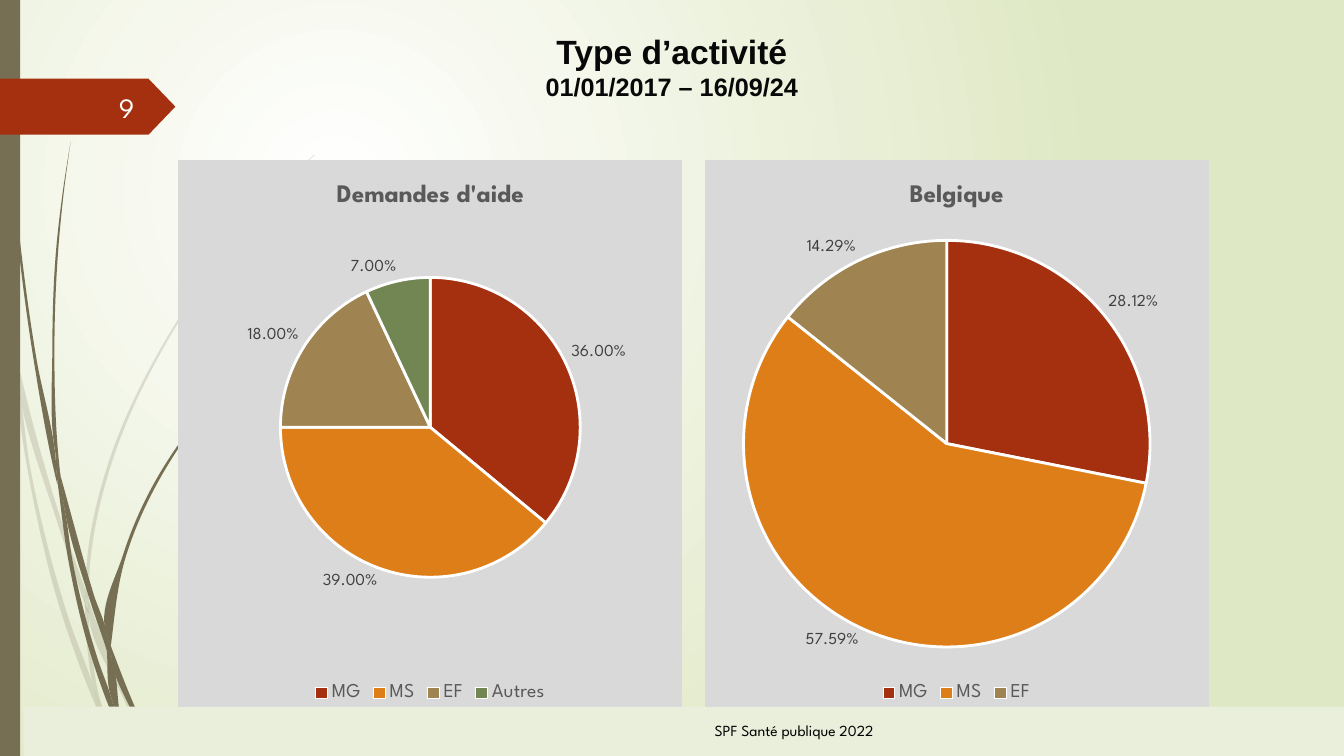
import itertools
import pptx
import pptx.chart.data
import pptx.dml.color
import pptx.enum.chart
import pptx.enum.shapes
import pptx.enum.text
import pptx.oxml
import pptx.oxml.ns
import pptx.util

Pt = pptx.util.Pt
ALIGN = pptx.enum.text.PP_ALIGN
SHAPES = pptx.enum.shapes.MSO_SHAPE
ANCHOR = pptx.enum.text.MSO_ANCHOR

# Content
TITLE = "Type d’activité\n01/01/2017 – 16/09/24"
NUMBER = "9"
SOURCE = "SPF Santé publique 2022"
PIES = [  # title, left edge, values by type, pie area within the chart
    ("Belgique", 503.3, {"MG": 0.2812, "MS": 0.5759, "EF": 0.1429}, (27.5, 57, 291, 291)),
    ("Demandes d'aide", 127.4, {"MG": 0.36, "MS": 0.39, "EF": 0.18, "Autres": 0.07},
     (33.5, 83.5, 293, 214.6)),
]
PIE_TOP, PIE_WIDE, PIE_HIGH = 114.5, 360, 390.2

# Grass parts: left and right edge as x, y, x, y ... from top to bottom
FAINT = [
    ((0, 215.3, 7.2, 247.7, 7.9, 252), (0, 203, 6.5, 231.8, 7.9, 252)),
    ((10.1, 248.4, 12.2, 270.7, 41.8, 375.8, 60.5, 431.3),
     (10.1, 248.4, 26, 312, 44.6, 374.4, 61.2, 421.9)),
    ((63.4, 429.1, 63.4, 439.2, 88.6, 499.7, 108, 540.7),
     (63.4, 429.1, 66.2, 437, 91.4, 498.2, 111.6, 540.7)),
    ((7.9, 252, 20.2, 338.4, 46.8, 447.1, 66.2, 499, 72.7, 514.1),
     (7.9, 252, 12.2, 270.7, 22.3, 337.7, 50.4, 445.7, 67, 491.8, 71.3, 509, 72.7, 514.1)),
    ((60.5, 431.3, 62.6, 465.1, 67, 491.8, 69.1, 498.2, 75.6, 511.9),
     (60.5, 431.3, 63.4, 437.8, 63.4, 439.2, 65.5, 465.1, 74.2, 508.3, 75.6, 511.9)),
    ((224.6, 110.2, 208.1, 126, 193, 141.8, 164.2, 175.7, 113.8, 250.6, 77, 331.9,
      61.2, 420.5, 61.2, 421.9, 63.4, 429.1),
     (224.6, 110.9, 208.8, 126, 193, 142.6, 164.9, 176.4, 115.2, 251.3, 79.2, 332.6,
      63.4, 420.5, 63.4, 429.1)),
    ((61.2, 421.9, 60.5, 431.3, 63.4, 439.2), (61.2, 421.9, 63.4, 429.1, 63.4, 439.2)),
    ((67, 491.8, 71.3, 509, 72.7, 514.1, 85.7, 540.7),
     (67, 491.8, 69.1, 498.2, 75.6, 511.9, 85.7, 540.7)),
]
DARK = [
    ((2.2, 0, 2.9, 34.6, 5, 79.2, 12.2, 167.8, 23.8, 255.6, 40.3, 343.4, 41, 346.3),
     (2.9, 0, 3.6, 34.6, 5.8, 78.5, 13.7, 167, 25.9, 255.6, 39.6, 326.2, 41, 346.3)),
    ((43.2, 339.8, 46.1, 363.6, 63.4, 426.2, 76.3, 464.4),
     (43.2, 339.8, 67, 424.8, 76.3, 454.3, 76.3, 464.4)),
    ((79.2, 461.5, 79.9, 472.3, 95, 509.8, 109.4, 539.3),
     (79.2, 461.5, 81.4, 467.3, 97.9, 508.3, 113, 539.3)),
    ((41, 343.4, 49, 401, 67, 474.5, 79.9, 509.8, 84.2, 519.8),
     (41, 343.4, 46.1, 363.6, 51.8, 400.3, 70.6, 473, 79.2, 497.5, 83.5, 516.2, 84.2, 519.8)),
    ((50.4, 101.5, 44.6, 139, 40.3, 176.4, 37.4, 251.3, 39.6, 323.3, 43.2, 339.8),
     (50.4, 101.5, 45.4, 139, 41.8, 176.4, 38.9, 251.3, 41.8, 326.2, 43.2, 339.8)),
    ((39.6, 323.3, 41, 343.4, 46.1, 363.6), (39.6, 323.3, 43.2, 339.8, 46.1, 363.6)),
    ((187.2, 247.7, 166.3, 268.6, 146.9, 291.6, 112.3, 341.3, 87.8, 396.7, 76.3, 454.3,
      79.2, 461.5),
     (187.9, 247.7, 166.3, 269.3, 147.6, 292.3, 113.8, 342.7, 90, 397.4, 79.9, 455.8,
      79.2, 461.5)),
    ((76.3, 464.4, 79.2, 497.5, 83.5, 508.3, 87.8, 517.7),
     (76.3, 464.4, 78.5, 468.7, 79.9, 472.3, 87.1, 515.5, 87.8, 517.7)),
    ((76.3, 454.3, 76.3, 464.4, 79.9, 472.3), (76.3, 454.3, 79.2, 461.5, 79.9, 472.3)),
    ((79.2, 497.5, 83.5, 516.2, 84.2, 519.8, 93.6, 539.3),
     (79.2, 497.5, 83.5, 508.3, 87.8, 517.7, 95.8, 539.3)),
]


class Theme:
    white, black, ink, flag_text = "FFFFFF", "000000", "080808", "FEFFFF"
    glow, grass, flag, band = "DFE8C4", "766F54", "A53010", "EAEFDB"
    panel, grey, label = "D9D9D9", "595959", "404040"
    slices = ("A53010", "DE7E18", "9F8351", "728653")
    head, body = "Arial", "League Spartan"
    title, date, number, source = 24, 18, 20, 11
    pie_title, legend, value, chart = 18, 14, 12, 10


def color(code):
    return pptx.dml.color.RGBColor.from_string(code)


def style(font, size, code, name=Theme.body, bold=False):
    font.size, font.name, font.bold = Pt(size), name, bold
    font.color.rgb = color(code)


def xml(text):
    names = pptx.oxml.ns.nsdecls("a", "c")
    return pptx.oxml.parse_xml(text.replace(">", f" {names}>", 1))


def paint(shape, code, alpha=100):
    shape.shadow.inherit = False
    shape.fill.solid()
    shape.fill.fore_color.rgb = color(code)
    shape.line.fill.background()
    if alpha < 100:
        tone = shape.element.xpath("./p:spPr/a:solidFill/a:srgbClr")[0]
        tone.append(xml(f'<a:alpha val="{alpha * 1000}"></a:alpha>'))


def add_box(slide, kind, box, code):
    shape = slide.shapes.add_shape(kind, *map(Pt, box))
    paint(shape, code)
    return shape


def add_text(slide, box, text, size, code, align):
    frame = slide.shapes.add_textbox(*map(Pt, box)).text_frame
    frame.word_wrap, frame.vertical_anchor = True, ANCHOR.MIDDLE
    frame.text = text
    frame.paragraphs[0].alignment = align
    style(frame.paragraphs[0].runs[0].font, size, code)


def smooth(edge):
    """Knots with two handles between each pair, x as a function of y."""
    knots = list(zip(edge[::2], edge[1::2]))
    gaps = [(q[1] - p[1], (q[0] - p[0]) / (q[1] - p[1])) for p, q in itertools.pairwise(knots)]
    mids = [(d * k + e * h) / (h + k) for (h, d), (k, e) in itertools.pairwise(gaps)]
    slopes = [gaps[0][1], *mids, gaps[-1][1]]
    points = knots[:1]
    for i, (h, _) in enumerate(gaps):
        (x, y), (u, v), step = knots[i], knots[i + 1], h / 3
        points += [(x + slopes[i] * step, y + step), (u - slopes[i + 1] * step, v - step), (u, v)]
    return points


def add_blade(slide, alpha, left, right):
    down, up = smooth(left), smooth(right)[::-1]
    bend = [down[-1], up[0]] if down[-1] != up[0] else []
    points = [(Pt(x), Pt(y)) for x, y in down + bend + (up if bend else up[1:])]
    build = slide.shapes.build_freeform(*points[0])
    build.add_line_segments(points[1:], close=True)
    shape = build.convert_to_shape()
    lines = shape.element.xpath(".//a:path/a:lnTo")
    for trio in zip(lines[::3], lines[1::3], lines[2::3]):
        curve = xml("<a:cubicBezTo></a:cubicBezTo>")
        trio[0].addprevious(curve)
        for part in trio:
            curve.append(part[0])
            part.getparent().remove(part)
    paint(shape, Theme.grass, alpha)


def add_pie(slide, title, left, shares, area):
    data = pptx.chart.data.CategoryChartData(number_format="0.00%")
    data.categories = list(shares)
    data.add_series("Series 1", list(shares.values()))
    box = map(Pt, (left, PIE_TOP, PIE_WIDE, PIE_HIGH))
    chart = slide.shapes.add_chart(pptx.enum.chart.XL_CHART_TYPE.PIE, *box, data).chart
    style(chart.font, Theme.chart, Theme.black)
    # Title and legend
    frame = chart.chart_title.text_frame
    frame.text = title
    style(frame.paragraphs[0].runs[0].font, Theme.pie_title, Theme.grey, bold=True)
    chart.has_legend = True
    chart.legend.position = pptx.enum.chart.XL_LEGEND_POSITION.BOTTOM
    chart.legend.include_in_layout = False
    style(chart.legend.font, Theme.legend, Theme.grey)
    # Slices and values
    chart.plots[0].vary_by_categories = True
    series = chart.plots[0].series[0]
    for i, code in enumerate(Theme.slices[:len(shares)]):
        look = series.points[i].format
        look.fill.solid()
        look.fill.fore_color.rgb = color(code)
        look.line.color.rgb, look.line.width = color(Theme.white), Pt(2)
    labels = series.data_labels
    labels.show_value = True
    labels.number_format, labels.number_format_is_linked = "0.00%", False
    labels.position = pptx.enum.chart.XL_LABEL_POSITION.OUTSIDE_END
    style(labels.font, Theme.value, Theme.label)
    # Panel fill and pie area
    fill = f'<a:solidFill><a:srgbClr val="{Theme.panel}"/></a:solidFill>'
    panel = xml(f'<c:spPr>{fill}<a:ln w="{Pt(0.75)}">{fill}</a:ln></c:spPr>')
    chart.element.xpath("c:chart")[0].addnext(panel)
    room = chart.element.xpath("c:chart/c:plotArea")[0]
    for old in room.xpath("c:layout"):
        room.remove(old)
    sides = "".join(f'<c:{k} val="{v / full:.4f}"/>' for k, v, full in
                    zip("xywh", area, (PIE_WIDE, PIE_HIGH) * 2))
    room.insert(0, xml('<c:layout><c:manualLayout><c:layoutTarget val="inner"/><c:xMode val="edge"/>'
                       f'<c:yMode val="edge"/>{sides}</c:manualLayout></c:layout>'))


deck = pptx.Presentation()
deck.slide_width, deck.slide_height = Pt(960), Pt(540)
slide = deck.slides.add_slide(deck.slide_layouts[5])
# Background glow
fill = slide.background.fill
fill.gradient()
for stop, code in zip(fill.gradient_stops, (Theme.white, Theme.glow)):
    stop.color.rgb = color(code)
line = slide.element.xpath(".//p:bg//a:lin")[0]
line.addnext(xml('<a:path path="circle"><a:fillToRect l="50000" t="50000" r="100000" b="100000"/></a:path>'))
line.getparent().remove(line)
# Grass, side bar, flag and footer band
for alpha, blades in ((20, FAINT), (100, DARK)):
    for blade in blades:
        add_blade(slide, alpha, *blade)
add_box(slide, SHAPES.RECTANGLE, (0, 0, 14.4, 540), Theme.grass)
add_box(slide, SHAPES.PENTAGON, (0, 56.2, 125.3, 40), Theme.flag).adjustments[0] = 0.48
add_box(slide, SHAPES.RECTANGLE, (17.3, 504.7, 942.7, 38.2), Theme.band)
# Title
head = slide.shapes.title
head.left, head.top, head.width, head.height = map(Pt, (218.9, 18.4, 522, 58.3))
head.text_frame.text = TITLE
head.text_frame.vertical_anchor = ANCHOR.TOP
for para, size in zip(head.text_frame.paragraphs, (Theme.title, Theme.date)):
    para.alignment = ALIGN.CENTER
    style(para.runs[0].font, size, Theme.ink, Theme.head, True)
# Slide number, charts and source
add_text(slide, (41.8, 61.9, 61.2, 28.8), NUMBER, Theme.number, Theme.flag_text, ALIGN.RIGHT)
for pie in PIES:
    add_pie(slide, *pie)
add_text(slide, (503.3, 511.2, 354.2, 20.9), SOURCE, Theme.source, Theme.black, ALIGN.LEFT)
deck.save("out.pptx")
